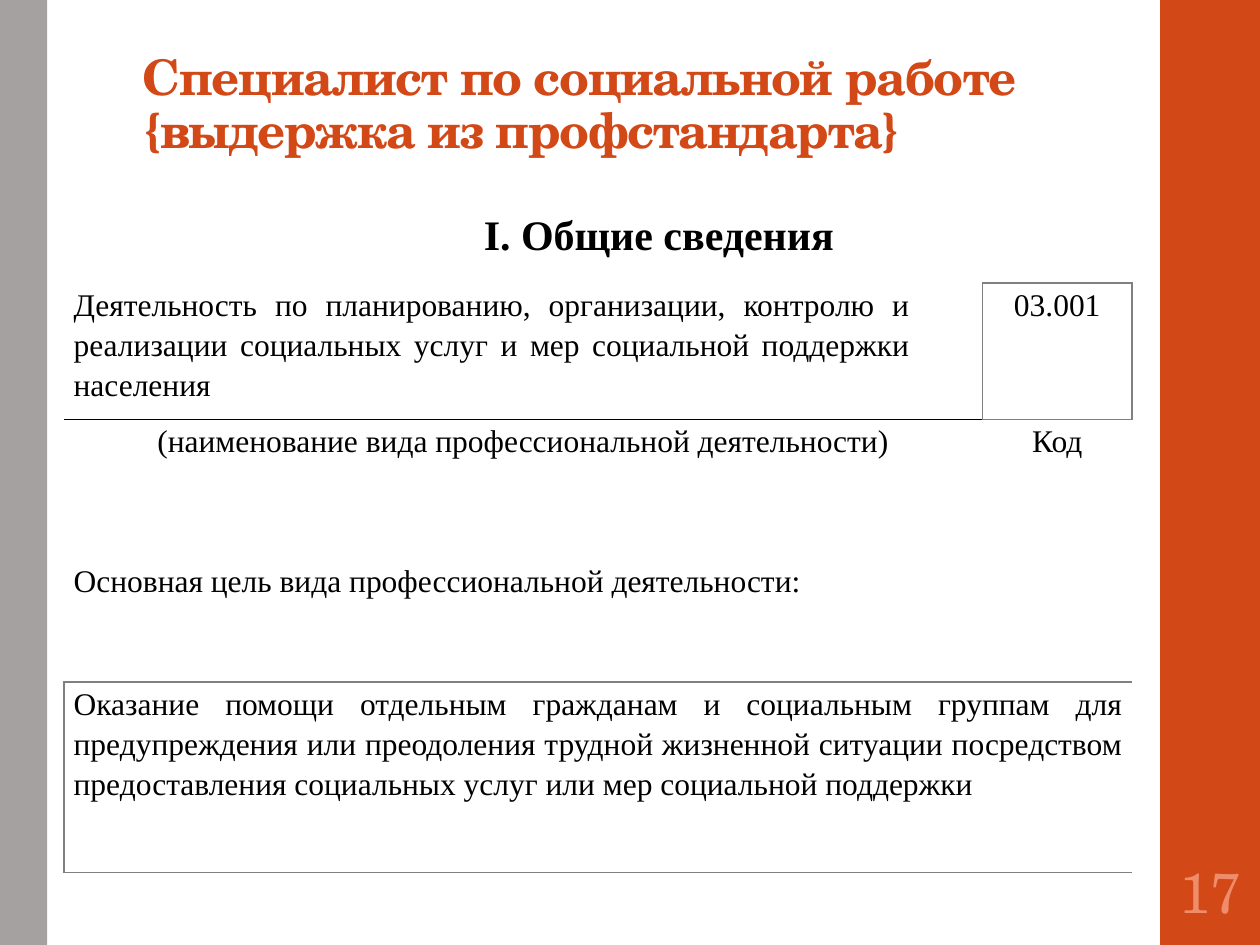
from dataclasses import dataclass

from lxml.etree import SubElement
from pptx import Presentation
from pptx.dml.color import RGBColor as RGB
from pptx.enum.shapes import MSO_SHAPE as Shape
from pptx.enum.text import MSO_ANCHOR as Anchor, PP_ALIGN as Align
from pptx.oxml.ns import qn
from pptx.util import Pt


@dataclass(frozen=True)
class Theme:
    accent: str = "D34817"
    side: str = "A6A1A1"
    number: str = "EF8C6A"
    ink: str = "000000"
    frame: str = "808080"
    display: str = "TeX Gyre Schola"
    body: str = "Times New Roman"
    title_size: float = 28
    number_size: float = 32
    heading_size: float = 24
    body_size: float = 18


@dataclass(frozen=True)
class Box:
    left: float
    top: float
    width: float
    height: float

    def emu(self) -> tuple:
        return Pt(self.left), Pt(self.top), Pt(self.width), Pt(self.height)


@dataclass(frozen=True)
class Bar:
    box: Box
    color: str


@dataclass(frozen=True)
class Entry:
    row: int
    col: int
    text: str
    align: Align = Align.CENTER
    anchor: Anchor = Anchor.TOP
    span: int = 1


@dataclass(frozen=True)
class Edge:
    row: int
    cols: tuple
    sides: str
    color: str


THEME = Theme()
BARS = [
    Bar(Box(662.9, 0, 57.1, 540), THEME.accent),
    Bar(Box(0, 0, 27, 540), THEME.side),
]
COLUMNS = [488.6, 36, 85.7]
ROWS = [77.8, 32.4, 117.8, 108.7]
ENTRIES = [
    Entry(0, 0, "Деятельность по планированию, организации, контролю и реализации "
          "социальных услуг и мер социальной поддержки населения", Align.JUSTIFY),
    Entry(0, 2, "03.001"),
    Entry(1, 0, "(наименование вида профессиональной деятельности)", span=2),
    Entry(1, 2, "Код"),
    Entry(2, 0, "Основная цель вида профессиональной деятельности:",
          Align.LEFT, Anchor.MIDDLE, span=3),
    Entry(3, 0, "Оказание помощи отдельным гражданам и социальным группам для "
          "предупреждения или преодоления трудной жизненной ситуации посредством "
          "предоставления социальных услуг или мер социальной поддержки",
          Align.JUSTIFY, span=3),
]
EDGES = [
    Edge(0, (0, 1), "B", THEME.ink),
    Edge(1, (0, 1), "T", THEME.ink),
    Edge(0, (1,), "R", THEME.frame),
    Edge(0, (2,), "LRTB", THEME.frame),
    Edge(1, (2,), "T", THEME.frame),
    Edge(2, (0, 1, 2), "B", THEME.frame),
    Edge(3, (0, 1, 2), "TB", THEME.frame),
    Edge(3, (0,), "L", THEME.frame),
    Edge(3, (2,), "R", THEME.frame),
]


def write(tf, text: str, *, size: float, font: str, color: str, bold: bool = False,
          align: Align = Align.LEFT, line: float = 1.0, tracking: float = 0) -> None:
    tf.word_wrap = True
    p = tf.paragraphs[0]
    p.alignment, p.line_spacing = align, line
    r = p.add_run()
    r.text = text
    r.font.size, r.font.name, r.font.bold = Pt(size), font, bold
    r.font.color.rgb = RGB.from_string(color)
    if tracking:
        r.font._element.set("spc", str(round(tracking * 100)))


def add_text(s, box: Box, text: str, anchor: Anchor, side: float = 7.2, **fmt) -> None:
    tf = s.shapes.add_textbox(*box.emu()).text_frame
    tf.vertical_anchor = anchor
    tf.margin_left = tf.margin_right = Pt(side)
    write(tf, text, **fmt)


def add_bar(s, bar: Bar) -> None:
    sp = s.shapes.add_shape(Shape.RECTANGLE, *bar.box.emu())
    sp.shadow.inherit = False
    sp.fill.solid()
    sp.fill.fore_color.rgb = RGB.from_string(bar.color)
    sp.line.fill.background()


def set_borders(cell, colors: dict) -> None:
    props = cell._tc.get_or_add_tcPr()
    for side in "LRTB":
        ln = SubElement(props, qn(f"a:ln{side}"), w=str(Pt(1)))
        if side in colors:
            fill = SubElement(ln, qn("a:solidFill"))
            SubElement(fill, qn("a:srgbClr"), val=colors[side])
        else:
            SubElement(ln, qn("a:noFill"))


def add_standard_table(s, left: float, top: float) -> None:
    box = Box(left, top, sum(COLUMNS), sum(ROWS))
    table = s.shapes.add_table(len(ROWS), len(COLUMNS), *box.emu()).table
    table.first_row = table.horz_banding = False
    for column, width in zip(table.columns, COLUMNS):
        column.width = Pt(width)
    for i, height in enumerate(ROWS):
        table.rows[i].height = Pt(height)
        for j in range(len(COLUMNS)):
            cell = table.cell(i, j)
            set_borders(cell, {side: e.color for e in EDGES
                               if e.row == i and j in e.cols for side in e.sides})
            cell.fill.background()
            cell.margin_left = cell.margin_right = Pt(5.4)
            cell.margin_top = cell.margin_bottom = 0
    for e in ENTRIES:
        cell = table.cell(e.row, e.col)
        if e.span > 1:
            cell.merge(table.cell(e.row, e.col + e.span - 1))
        cell.vertical_anchor = e.anchor
        write(cell.text_frame, e.text, size=THEME.body_size, font=THEME.body,
              color=THEME.ink, align=e.align, line=1.15)


def main() -> None:
    prs = Presentation()
    prs.slide_width, prs.slide_height = Pt(720), Pt(540)
    s = prs.slides.add_slide(prs.slide_layouts[6])
    for bar in BARS:
        add_bar(s, bar)
    add_text(s, Box(74.5, 28.8, 572, 65.5),
             "Специалист по социальной работе {выдержка из профстандарта}",
             Anchor.BOTTOM, size=THEME.title_size, font=THEME.display,
             color=THEME.accent, bold=True, line=0.9, tracking=-0.7)
    add_text(s, Box(664.6, 486, 54, 46.8), "17", Anchor.MIDDLE, side=2.2,
             size=THEME.number_size, font=THEME.display, color=THEME.number,
             align=Align.CENTER)
    add_standard_table(s, 36.7, 161.8)
    add_text(s, Box(12.2, 115.8, 728.6, 36), "I. Общие сведения", Anchor.TOP,
             size=THEME.heading_size, font=THEME.body, color=THEME.ink,
             bold=True, align=Align.CENTER)
    prs.save("out.pptx")


if __name__ == "__main__":
    main()
